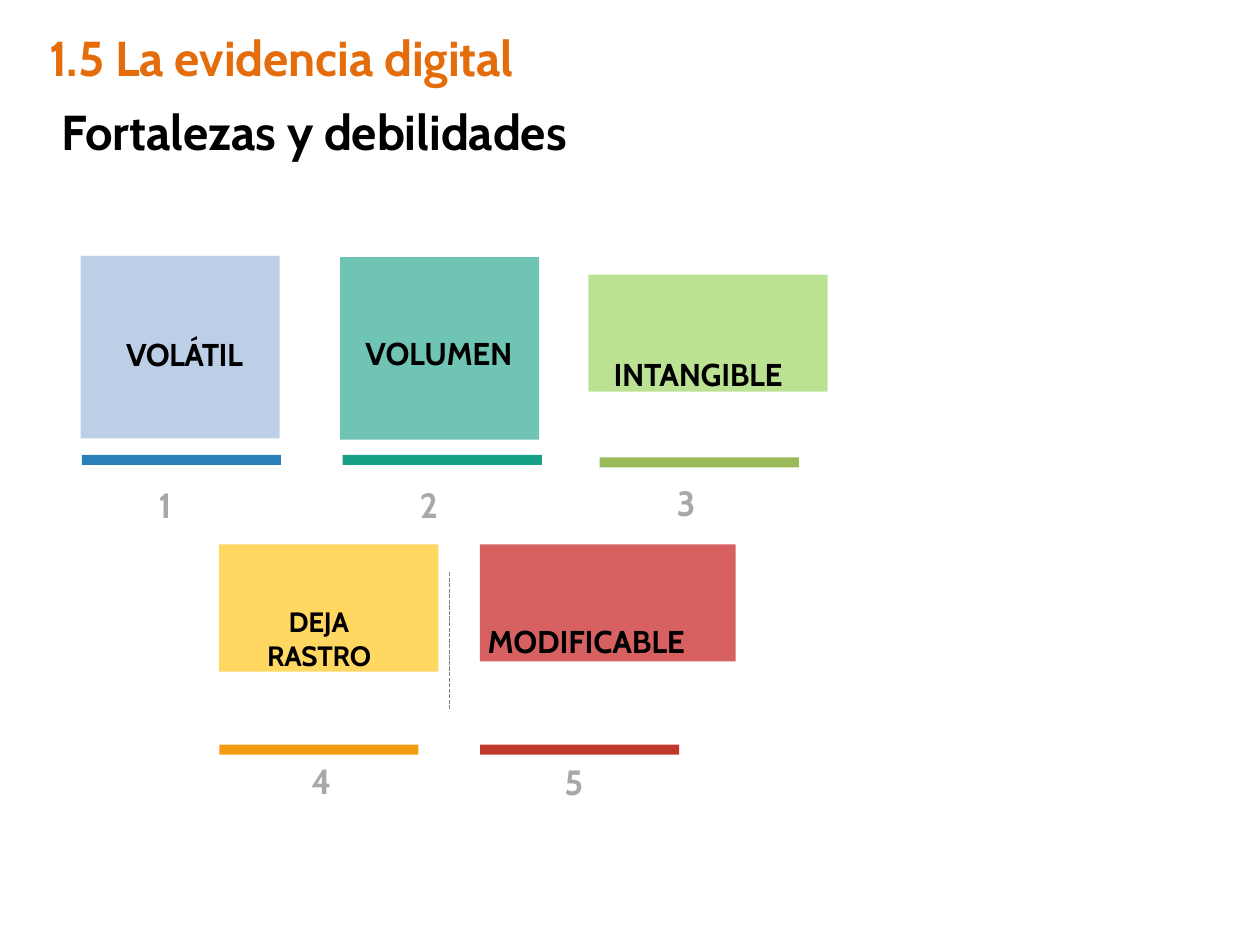
from pptx import Presentation
from pptx import util as u
from pptx.dml.color import RGBColor
from pptx.enum import dml, shapes, text
from pptx.oxml.ns import qn
from lxml import etree

Inches, Pt = u.Inches, u.Pt


def rgb(value):
    return RGBColor.from_string(value)


def write(sp, lines, size, top=0, left=0, first=0, color="000000", spacing=0):
    """Fill a shape with bold left-aligned lines; left and first are indents, spacing is in points."""
    tf = sp.text_frame
    tf.word_wrap = True
    tf.auto_size = text.MSO_AUTO_SIZE.NONE
    tf.vertical_anchor = text.MSO_ANCHOR.TOP
    tf.margin_left = tf.margin_right = tf.margin_bottom = 0
    tf.margin_top = Inches(top)
    for i, line in enumerate(lines):
        p = tf.paragraphs[0] if i == 0 else tf.add_paragraph()
        p.alignment = text.PP_ALIGN.LEFT
        pPr = p._p.get_or_add_pPr()
        pPr.set("marL", str(Inches(left)))
        pPr.set("indent", str(Inches(first)))
        r = p.add_run()
        r.text = line
        r.font.name, r.font.size, r.font.bold = "Cabin", Pt(size), True
        r.font.color.rgb = rgb(color)
        r._r.get_or_add_rPr().set("spc", str(round(spacing * 100)))
    return tf


prs = Presentation()
prs.slide_width, prs.slide_height = Inches(10), Inches(7.5)
s = prs.slides.add_slide(prs.slide_layouts[5])

title = s.shapes.title
title.left, title.top, title.width, title.height = map(Inches, (0.38, 0.04, 7.04, 1.45))
tf = write(title, ["1.5 La evidencia digital", "Fortalezas y debilidades"], 28,
           top=0.18, left=0.01, color="E46C0A", spacing=-0.05)
subtitle = tf.paragraphs[1]
subtitle.space_before = Pt(8.5)
subtitle._p.get_or_add_pPr().set("marL", str(Inches(0.11)))
subtitle.runs[0].font.color.rgb = rgb("000000")

# number position, then bar position and colour
markers = [
    (1.25, 3.83, 0.65, 3.61, "2980B9"),
    (3.32, 3.83, 2.72, 3.61, "16A085"),
    (5.36, 3.81, 4.76, 3.63, "9BBB59"),
    (2.46, 6.02, 1.74, 5.91, "F39C12"),
    (4.47, 6.03, 3.81, 5.91, "C0392B"),
]
for number, (x, y, bar_x, bar_y, color) in enumerate(markers, 1):
    box = s.shapes.add_textbox(Inches(x), Inches(y), Inches(0.17), Inches(0.36))
    write(box, [str(number)], 20, top=0.01, left=0.01, color="A7A8A7", spacing=-0.1)
    bar = s.shapes.add_shape(shapes.MSO_SHAPE.RECTANGLE, Inches(bar_x), Inches(bar_y),
                             Inches(1.58), Inches(0.08))
    bar.shadow.inherit = False
    bar.fill.solid()
    bar.fill.fore_color.rgb = rgb(color)
    bar.line.fill.background()

divider = s.shapes.add_connector(shapes.MSO_CONNECTOR.STRAIGHT, Inches(3.57), Inches(4.54),
                                 Inches(3.57), Inches(5.63))
divider.line.color.rgb = rgb("808080")
divider.line.width = Pt(0.78)
divider.line.dash_style = dml.MSO_LINE.SQUARE_DOT
etree.SubElement(divider._element.spPr, qn("a:effectLst"))

# label, box, fill, text size, top inset, left and first-line indents, letter spacing
cards = [
    ("VOLÁTIL", (0.64, 2.03, 1.58, 1.45), "95B3D7", 18, 0.63, 0.36, 0, -0.3),
    ("VOLUMEN", (2.7, 2.04, 1.58, 1.45), "17A085", 18, 0.61, 0.2, 0, -0.1),
    ("INTANGIBLE", (4.67, 2.18, 1.9, 0.93), "92D050", 18, 0.64, 0.2, 0, -0.2),
    ("DEJA RASTRO", (1.74, 4.32, 1.74, 1.01), "FFC000", 16, 0.48, 0.38, 0.17, -0.15),
    ("MODIFICABLE", (3.81, 4.32, 2.03, 0.93), "C00000", 18, 0.62, 0.06, 0, -0.1),
]
for label, frame, color, size, top, left, first, spacing in cards:
    card = s.shapes.add_shape(shapes.MSO_SHAPE.RECTANGLE, *map(Inches, frame))
    card.shadow.inherit = False
    card.fill.solid()
    card.fill.fore_color.rgb = rgb(color)
    fill = card._element.spPr.find(qn("a:solidFill"))
    etree.SubElement(fill[0], qn("a:alpha"), val="62000")
    card.line.fill.background()
    write(card, [label], size, top=top, left=left, first=first, spacing=spacing)

prs.save("out.pptx")
